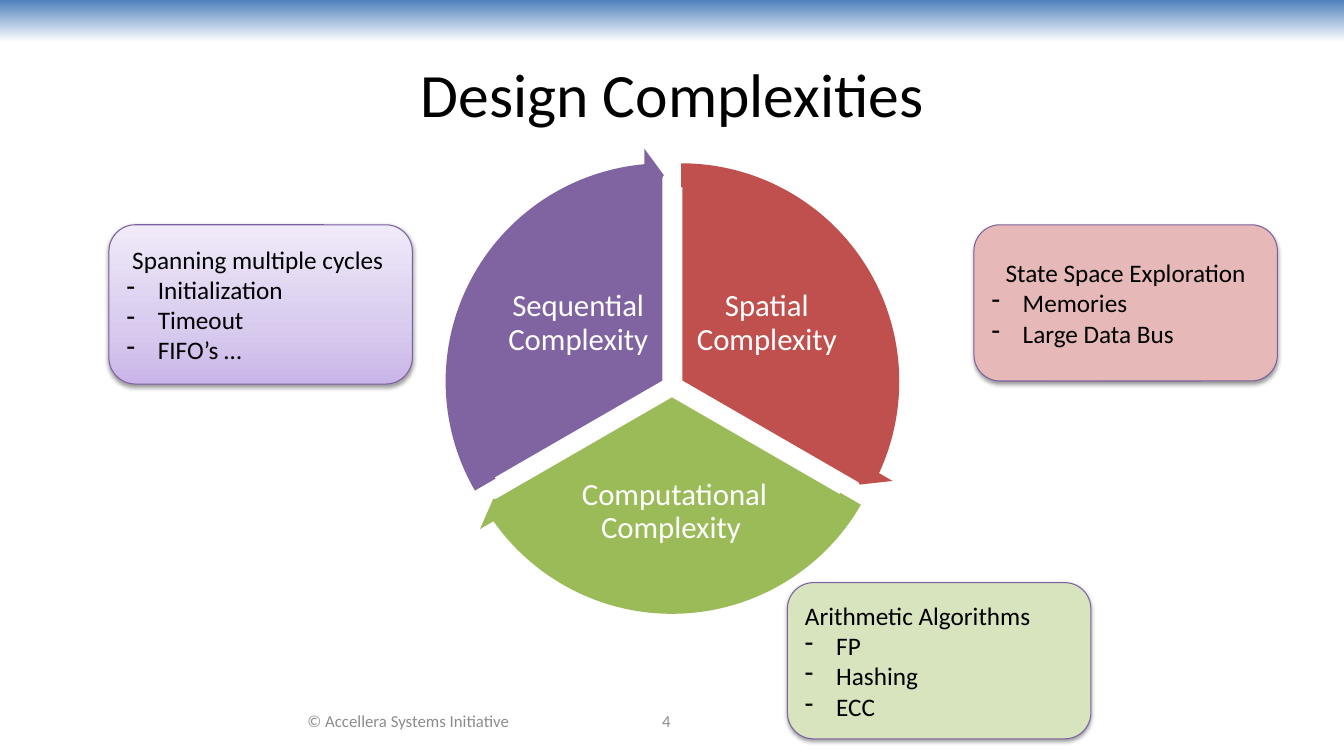
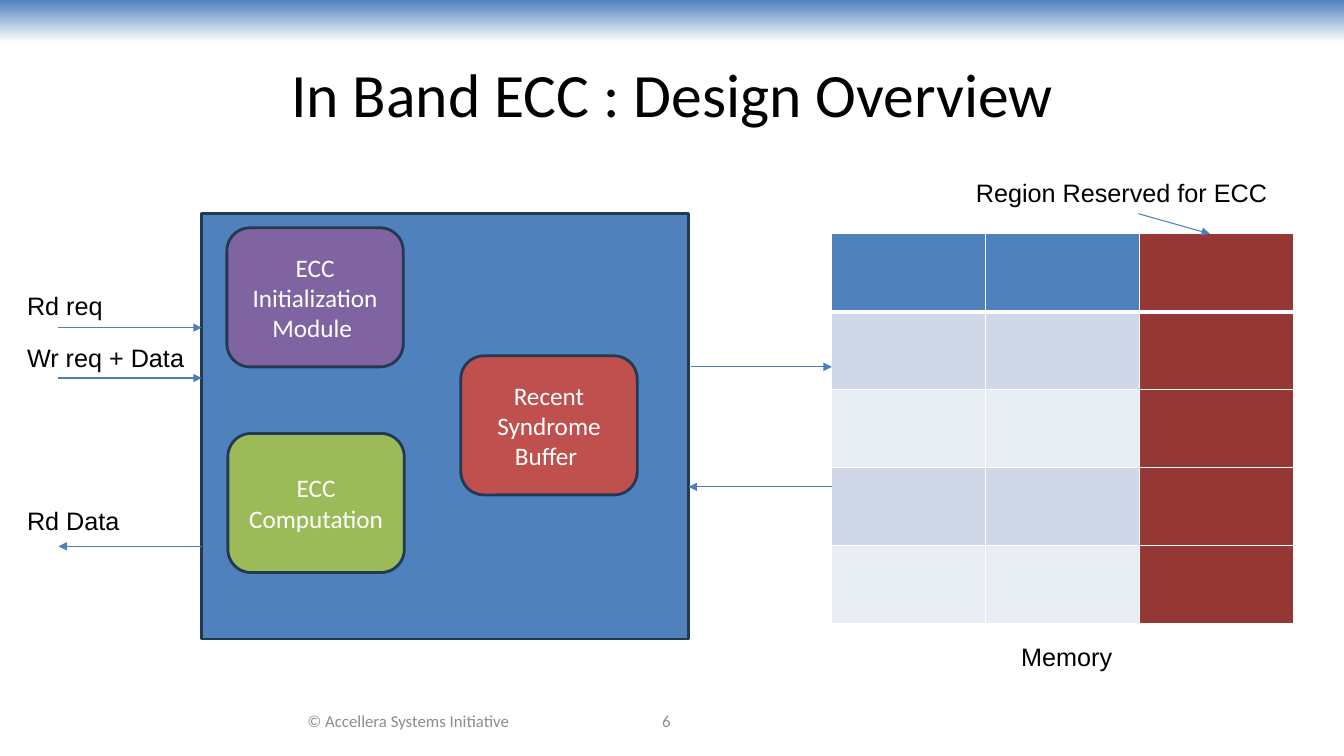
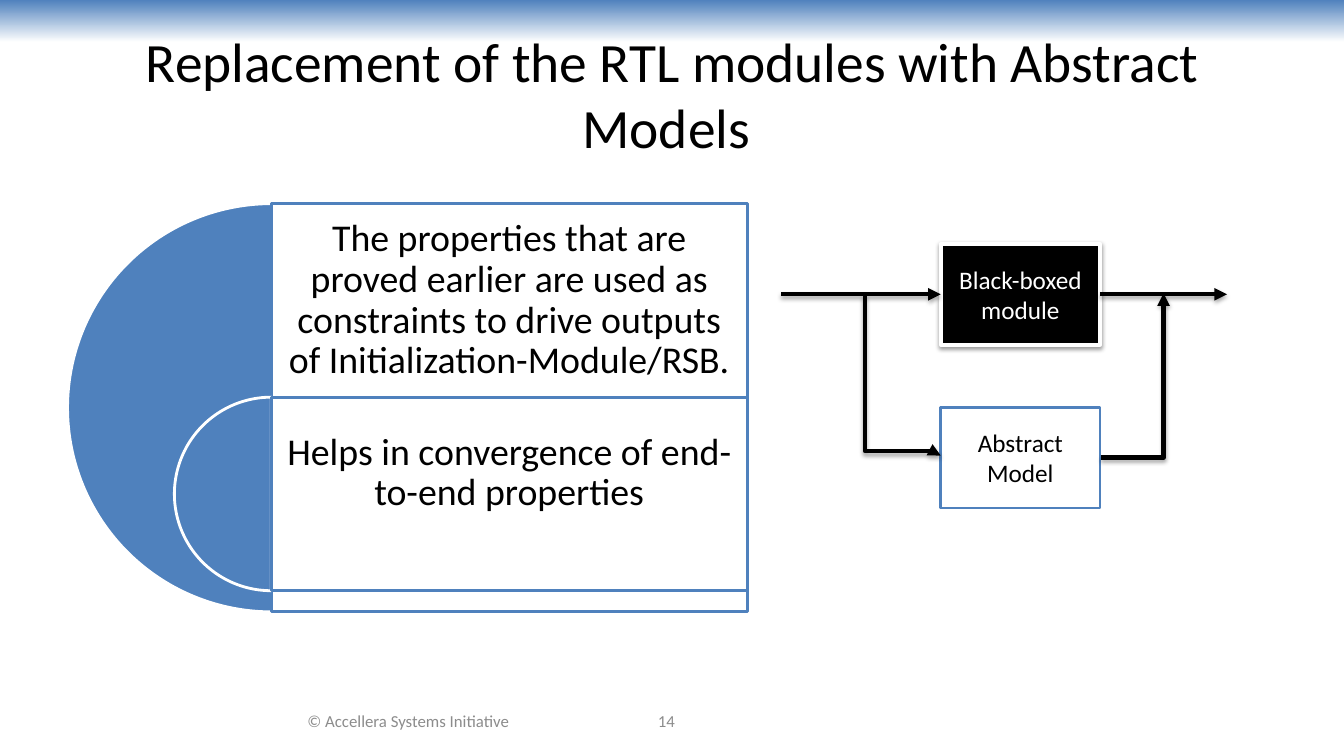
"""Build three slides on verifying an in-band ECC design."""
from dataclasses import dataclass
from itertools import product
from typing import NamedTuple, Optional, Sequence

from lxml.etree import SubElement
from pptx import Presentation
from pptx.dml.color import RGBColor
from pptx.enum.shapes import MSO_CONNECTOR as Link, MSO_SHAPE as Preset
from pptx.enum.text import MSO_ANCHOR as Anchor, PP_ALIGN as Align
from pptx.oxml.ns import qn
from pptx.shapes.autoshape import Shape
from pptx.shapes.connector import Connector
from pptx.slide import Slide
from pptx.util import Inches, Pt

WHITE = RGBColor(0xFF, 0xFF, 0xFF)
BLACK = RGBColor(0x00, 0x00, 0x00)
GREY = RGBColor(0x8C, 0x8C, 0x8C)
BLUE = RGBColor(0x4F, 0x81, 0xBD)
ARROW_BLUE = RGBColor(0x4B, 0x7E, 0xBC)
NAVY = RGBColor(0x23, 0x39, 0x53)
RED = RGBColor(0xC0, 0x50, 0x4D)
GREEN = RGBColor(0x9B, 0xBB, 0x59)
PURPLE = RGBColor(0x80, 0x64, 0xA2)
VIOLET = RGBColor(0x7D, 0x60, 0xA0)
PINK = RGBColor(0xE6, 0xB9, 0xB8)
LIGHT_GREEN = RGBColor(0xD7, 0xE4, 0xBD)
DARK_RED = RGBColor(0x95, 0x37, 0x35)
ROW_DARK = RGBColor(0xD0, 0xD8, 0xE8)
ROW_LIGHT = RGBColor(0xE9, 0xED, 0xF4)
LILAC_STOPS = (
    (0, RGBColor(0xC9, 0xB5, 0xE8)),
    (35, RGBColor(0xD8, 0xCB, 0xEE)),
    (100, RGBColor(0xF0, 0xEA, 0xF9)),
)
BAND_STOPS = ((0, BLUE), (100, WHITE))

PIE_SIZE = 4.13
RING_SIZE = 4.64
HEAD_ANGLE = 3.275
BULLET_INDENT = Inches(0.31)
DEFAULT_INSETS = (0.1, 0.05, 0.1, 0.05)


class Box(NamedTuple):
    left: float
    top: float
    width: float
    height: float


class Style(NamedTuple):
    size: float
    color: RGBColor
    font: str = "Calibri"
    align: Align = Align.CENTER
    spacing: Optional[float] = None


class Outline(NamedTuple):
    color: RGBColor
    width: float


class Shadow(NamedTuple):
    opacity: int
    distance: int


@dataclass(frozen=True)
class Wedge:
    left: float
    top: float
    start: float
    end: float
    color: RGBColor
    label: str
    label_box: Box


@dataclass(frozen=True)
class Callout:
    box: Box
    fill: Optional[RGBColor]
    heading: str
    align: Align
    bullets: Sequence[str]


@dataclass(frozen=True)
class Module:
    box: Box
    color: RGBColor
    lines: Sequence[str]


@dataclass(frozen=True)
class Panel:
    pie: Box
    box: Box
    text_height: float
    text: str
    bottom_inset: float


SOFT_SHADOW = Shadow(38, 20000)
LINE_SHADOW = Shadow(35, 23000)
TITLE = Style(44, BLACK)
LONG_TITLE = Style(39.6, BLACK)
FOOTER = Style(12, GREY)
WEDGE_LABEL = Style(22, WHITE, spacing=0.9)
BODY = Style(18, BLACK)
BODY_WHITE = Style(18, WHITE)
SIGNAL = Style(18, BLACK, "Arial", Align.LEFT)
PANEL_TEXT = Style(27, BLACK, spacing=0.9)

WEDGES = (
    Wedge(4.69, 1.72, 162, 18, RED, "Spatial Complexity", Box(6.9, 2.63, 1.41, 1.16)),
    Wedge(4.6, 1.86, 18, 90, GREEN, "Computational Complexity ", Box(5.61, 4.57, 2.16, 1.02)),
    Wedge(4.52, 1.72, 90, 162, PURPLE, "Sequential Complexity", Box(5.03, 2.63, 1.41, 1.16)),
)
CALLOUTS = (
    Callout(Box(1.08, 2.23, 3.01, 1.58), None, "Spanning multiple cycles ", Align.CENTER,
            ("Initialization", "Timeout", "FIFO’s …")),
    Callout(Box(9.66, 2.23, 3.01, 1.55), PINK, "State Space Exploration", Align.CENTER,
            ("Memories", "Large Data Bus")),
    Callout(Box(7.81, 5.78, 3.01, 1.55), LIGHT_GREEN, "Arithmetic Algorithms", Align.LEFT,
            ("FP", "Hashing", "ECC")),
)
MODULES = (
    Module(Box(2.25, 2.26, 1.75, 1.38), PURPLE, ("ECC", "Initialization", "Module ")),
    Module(Box(2.26, 4.3, 1.75, 1.38), GREEN, ("ECC", "Computation")),
    Module(Box(4.57, 3.53, 1.75, 1.38), RED, ("Recent Syndrome Buffer ",)),
)
SIGNALS = (
    ("Memory", Box(10.03, 6.31, 1.2, 0.4)),
    ("Region Reserved for ECC", Box(9.58, 1.71, 3.42, 0.4)),
    ("Rd req", Box(0.17, 2.83, 1.33, 0.4)),
    ("Wr req + Data", Box(0.17, 3.35, 1.83, 0.4)),
    ("Rd Data", Box(0.17, 4.96, 1.83, 0.4)),
)
SIGNAL_ARROWS = (
    (11.29, 2.12, 12, 2.32),
    (0.58, 3.25, 2, 3.25),
    (0.58, 3.75, 2, 3.75),
    (2, 5.42, 0.58, 5.42),
    (6.85, 3.64, 8.25, 3.64),
    (8.25, 4.83, 6.83, 4.83),
)
PANELS = (
    Panel(Box(0.67, 2.02, 4.05, 4.05), Box(2.69, 2.02, 4.72, 4.05), 1.92,
          "The properties that are proved earlier are used as constraints "
          "to drive outputs of Initialization-Module/RSB.", 0.11),
    Panel(Box(1.73, 3.94, 1.92, 1.92), Box(2.69, 3.94, 4.72, 1.92), 1.92,
          "Helps in convergence of end-to-end properties", 0.52),
)


def write_text(
    shape: Shape,
    lines: Sequence[str],
    style: Style,
    anchor: Anchor = Anchor.MIDDLE,
    bullets: Sequence[str] = (),
    insets: Sequence[float] = DEFAULT_INSETS,
) -> None:
    frame = shape.text_frame
    frame.word_wrap = True
    frame.vertical_anchor = anchor
    frame.margin_left, frame.margin_top, frame.margin_right, frame.margin_bottom = map(Inches, insets)
    for index, line in enumerate((*lines, *bullets)):
        para = frame.add_paragraph() if index else frame.paragraphs[0]
        para.text = line
        para.alignment = style.align
        if style.spacing:
            para.line_spacing = style.spacing
        if index >= len(lines):
            para.alignment = Align.LEFT
            props = para._p.get_or_add_pPr()
            props.set("marL", str(BULLET_INDENT))
            props.set("indent", str(-BULLET_INDENT))
            SubElement(props, qn("a:buFontTx"))
            SubElement(props, qn("a:buChar")).set("char", "-")
        para.font.name = style.font
        para.font.size = Pt(style.size)
        para.font.color.rgb = style.color


def add_label(
    slide: Slide,
    box: Box,
    text: str,
    style: Style,
    anchor: Anchor = Anchor.MIDDLE,
    insets: Sequence[float] = DEFAULT_INSETS,
) -> None:
    label = slide.shapes.add_textbox(*map(Inches, box))
    write_text(label, (text,), style, anchor, insets=insets)


def add_preset(
    slide: Slide,
    preset: Preset,
    box: Box,
    fill: Optional[RGBColor],
    outline: Optional[Outline] = None,
    adjustments: Sequence[float] = (),
) -> Shape:
    shape = slide.shapes.add_shape(preset, *map(Inches, box))
    shape.shadow.inherit = False
    for index, value in enumerate(adjustments):
        shape.adjustments[index] = value
    if fill is not None:
        shape.fill.solid()
        shape.fill.fore_color.rgb = fill
    if outline:
        shape.line.color.rgb = outline.color
        shape.line.width = Pt(outline.width)
    else:
        shape.line.fill.background()
    return shape


def fill_gradient(shape: Shape, stops: Sequence[tuple[int, RGBColor]], angle: int) -> None:
    shape.fill.gradient()
    shape.fill.gradient_angle = angle
    stop_list = shape.element.spPr.find(".//" + qn("a:gsLst"))
    for child in list(stop_list):
        stop_list.remove(child)
    for position, color in stops:
        stop = SubElement(stop_list, qn("a:gs"), pos=str(position * 1000))
        SubElement(stop, qn("a:srgbClr"), val=str(color))


def cast_shadow(shape: Shape | Connector, shadow: Shadow) -> None:
    effects = shape.element.spPr.find(qn("a:effectLst"))
    outer = SubElement(effects, qn("a:outerShdw"), blurRad="40000", dist=str(shadow.distance),
                       dir="5400000", rotWithShape="0")
    color = SubElement(outer, qn("a:srgbClr"), val=str(BLACK))
    SubElement(color, qn("a:alpha"), val=str(shadow.opacity * 1000))


def add_arrow(
    slide: Slide, ends: Sequence[float], outline: Outline, kind: Link = Link.STRAIGHT
) -> Connector:
    arrow = slide.shapes.add_connector(kind, *map(Inches, ends))
    arrow.line.color.rgb = outline.color
    arrow.line.width = Pt(outline.width)
    props = arrow.element.spPr
    SubElement(props.find(qn("a:ln")), qn("a:tailEnd"), type="triangle")
    SubElement(props, qn("a:effectLst"))
    return arrow


def add_page(deck: Presentation, title: str, number: int, style: Style = TITLE) -> Slide:
    slide = deck.slides.add_slide(deck.slide_layouts[6])
    band = add_preset(slide, Preset.RECTANGLE, Box(0, 0, 13.33, 0.42), None)
    fill_gradient(band, BAND_STOPS, 270)
    add_label(slide, Box(0.67, 0.3, 12, 1.25), title, style)
    add_label(slide, Box(2.44, 6.95, 3.22, 0.4), "© Accellera Systems Initiative", FOOTER)
    add_label(slide, Box(5.33, 6.95, 2.56, 0.4), str(number), FOOTER)
    return slide


def build_complexities(deck: Presentation) -> None:
    slide = add_page(deck, "Design Complexities", 4)
    for wedge in WEDGES:
        pie_box = Box(wedge.left, wedge.top, PIE_SIZE, PIE_SIZE)
        add_preset(slide, Preset.PIE, pie_box, wedge.color, Outline(WHITE, 2), (wedge.start, wedge.end))
        add_label(slide, wedge.label_box, wedge.label, WEDGE_LABEL, insets=(0, 0, 0, 0))
    margin = (RING_SIZE - PIE_SIZE) / 2
    for wedge in WEDGES:
        ring_box = Box(wedge.left - margin, wedge.top - margin, RING_SIZE, RING_SIZE)
        angles = (0.051, HEAD_ANGLE, wedge.end - HEAD_ANGLE, wedge.start, 0.059)
        add_preset(slide, Preset.CIRCULAR_ARROW, ring_box, wedge.color, adjustments=angles)
    for callout in CALLOUTS:
        shape = add_preset(slide, Preset.ROUNDED_RECTANGLE, callout.box, callout.fill,
                           Outline(VIOLET, 0.75))
        if callout.fill is None:
            fill_gradient(shape, LILAC_STOPS, 90)
        cast_shadow(shape, SOFT_SHADOW)
        style = BODY._replace(align=callout.align)
        # heading paragraphs come before the bullets
        write_text(shape, (callout.heading,), style, bullets=callout.bullets)


def add_memory(slide: Slide) -> None:
    rows, columns = 5, 3
    frame = slide.shapes.add_table(rows, columns, *map(Inches, Box(8.25, 2.32, 4.58, 3.87)))
    table = frame.table
    for row, column in product(range(rows), range(columns)):
        cell = table.cell(row, column)
        props = cell._tc.get_or_add_tcPr()
        for side in ("L", "R", "T", "B"):
            thick = (row, side) in ((0, "B"), (1, "T"))
            border = SubElement(props, qn(f"a:ln{side}"), w=str(Pt(3 if thick else 1)))
            SubElement(SubElement(border, qn("a:solidFill")), qn("a:srgbClr"), val=str(WHITE))
        cell.fill.solid()
        if column == columns - 1:
            color = DARK_RED
        elif row == 0:
            color = BLUE
        else:
            color = ROW_DARK if row % 2 else ROW_LIGHT
        cell.fill.fore_color.rgb = color


def build_overview(deck: Presentation) -> None:
    slide = add_page(deck, "In Band ECC : Design Overview", 6)
    outline = Outline(NAVY, 2)
    add_preset(slide, Preset.RECTANGLE, Box(2, 2.12, 4.83, 4.22), BLUE, outline)
    add_memory(slide)
    for text, box in SIGNALS:
        add_label(slide, box, text, SIGNAL, Anchor.TOP)
    for ends in SIGNAL_ARROWS:
        add_arrow(slide, ends, Outline(ARROW_BLUE, 0.75))
    for module in MODULES:
        shape = add_preset(slide, Preset.ROUNDED_RECTANGLE, module.box, module.color, outline)
        write_text(shape, module.lines, BODY_WHITE)


def build_replacement(deck: Presentation) -> None:
    slide = add_page(deck, "Replacement of the RTL modules with Abstract Models ", 14, LONG_TITLE)
    for panel in PANELS:
        add_preset(slide, Preset.PIE, panel.pie, BLUE, Outline(WHITE, 2), (54, 162))
        shape = add_preset(slide, Preset.RECTANGLE, panel.box, WHITE, Outline(BLUE, 2))
        color = shape.element.spPr.find(qn("a:solidFill")).find(qn("a:srgbClr"))
        SubElement(color, qn("a:alpha"), val="90000")
        add_label(slide, panel.box._replace(height=panel.text_height), panel.text, PANEL_TEXT,
                  insets=(0.11, 0.11, 0.11, panel.bottom_inset))

    black_box = add_preset(slide, Preset.RECTANGLE, Box(9.33, 2.42, 1.58, 1), BLACK, Outline(WHITE, 3))
    cast_shadow(black_box, SOFT_SHADOW)
    write_text(black_box, ("Black-boxed module",), BODY_WHITE)
    model = add_preset(slide, Preset.RECTANGLE, Box(9.33, 4.04, 1.58, 1), WHITE, Outline(BLUE, 2))
    write_text(model, ("Abstract Model",), BODY)

    wire = Outline(BLACK, 3)
    inlet = add_arrow(slide, (7.75, 2.92, 9.33, 2.92), wire)
    inlet.end_connect(black_box, 1)
    outlet = add_arrow(slide, (10.92, 2.92, 12.17, 2.92), wire)
    outlet.begin_connect(black_box, 3)
    branch = add_arrow(slide, (9.75, 3.35, 8.16, 4.1), wire, Link.ELBOW)
    branch.element.spPr.find(qn("a:xfrm")).set("rot", "16200000")
    guides = branch.element.spPr.find(qn("a:prstGeom")).find(qn("a:avLst"))
    SubElement(guides, qn("a:gd"), name="adj1", fmla="val 97300")
    merge = add_arrow(slide, (10.92, 4.54, 11.54, 2.91), wire, Link.ELBOW)
    merge.element.spPr.find(qn("a:prstGeom")).set("prst", "bentConnector2")
    for arrow in (inlet, outlet, branch, merge):
        cast_shadow(arrow, LINE_SHADOW)


def main() -> None:
    deck = Presentation()
    deck.slide_width = Inches(13.33)
    deck.slide_height = Inches(7.5)
    build_complexities(deck)
    build_overview(deck)
    build_replacement(deck)
    deck.save("out.pptx")


if __name__ == "__main__":
    main()
